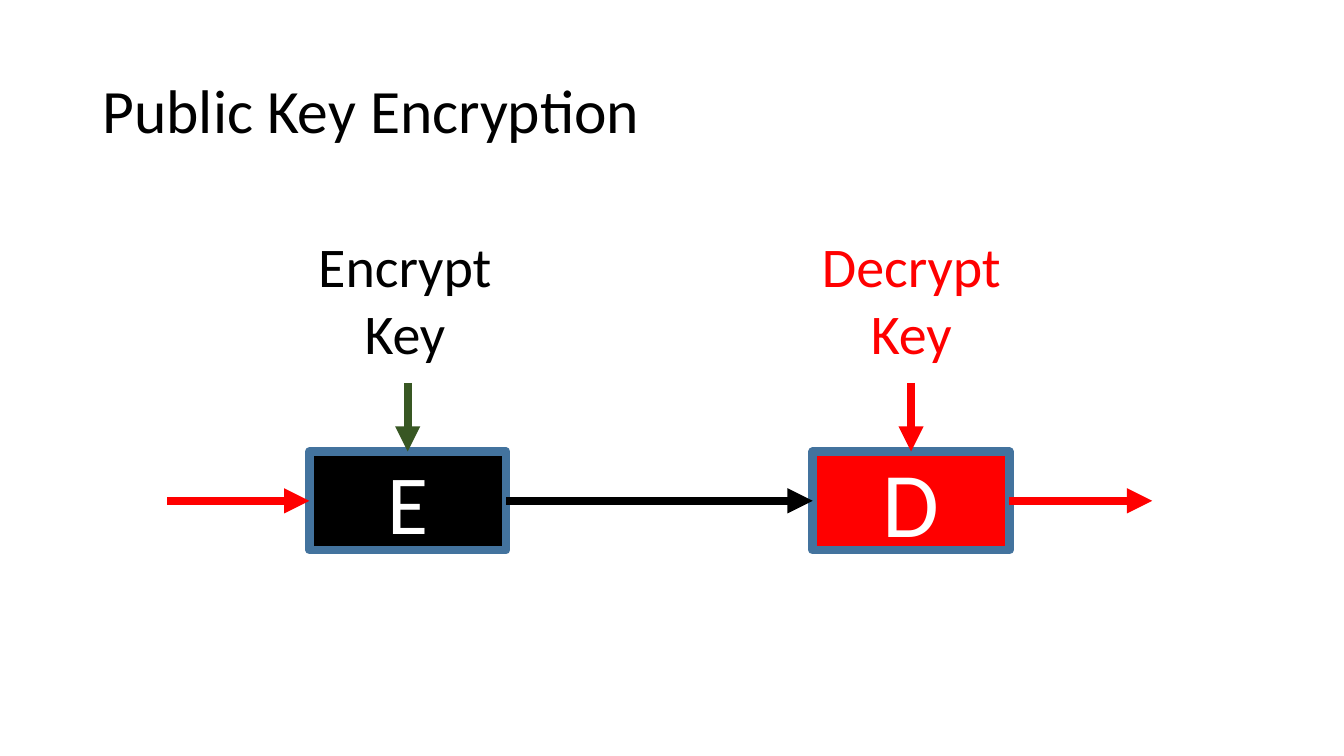
"""Build a slide that shows the flow of public key encryption."""
from typing import Any, NamedTuple, Optional

from lxml import etree
from pptx import Presentation
from pptx import util as u
from pptx.dml.color import RGBColor
from pptx.enum import shapes, text
from pptx.oxml import ns

BLACK, RED, WHITE = "000000", "FF0000", "FFFFFF"
GREEN, BLUE = "385723", "43739E"
TOP, WIDE, HIGH = 322.5, 140.5, 70.5
MID = TOP + HIGH / 2
KEY = 273.5
WEIGHT = 6


class Box(NamedTuple):
    word: str
    left: float
    fill: str
    size: float


class Label(NamedTuple):
    word: str
    left: float
    wide: float
    tint: str


class Arrow(NamedTuple):
    start: tuple[float, float]
    end: tuple[float, float]
    tint: str
    tail: Optional[tuple[str, int]] = None
    head: Optional[tuple[str, int]] = None


BOXES = [Box("E", 221, BLACK, 60), Box("D", 580.5, RED, 66)]
LABELS = [
    Label("Decrypt Key", 566, 170, RED),
    Label("Encrypt Key", 189.5, 199.5, BLACK),
]
E_LEFT, D_LEFT = (box.left for box in BOXES)
E_MID, D_MID = E_LEFT + WIDE / 2, D_LEFT + WIDE / 2
ARROWS = [
    Arrow((E_LEFT + WIDE, MID), (D_LEFT, MID), BLACK, ("E", 3), ("D", 1)),
    Arrow((D_LEFT + WIDE, MID), (823, MID), RED, tail=("D", 3)),
    Arrow((119.5, MID), (E_LEFT, MID), RED, head=("E", 1)),
    Arrow((E_MID, KEY), (E_MID, TOP), GREEN, head=("E", 0)),
    Arrow((D_MID, KEY), (D_MID, TOP), RED, head=("D", 0)),
]


def color(code: str) -> RGBColor:
    return RGBColor.from_string(code)


def apply(item: Any, form: dict[str, Any]) -> None:
    for name, value in form.items():
        setattr(item, name, value)


def write(frame: Any, word: str, size: float, tint: str, align: Any) -> None:
    frame.word_wrap = True
    para = frame.paragraphs[0]
    para.alignment = align
    run = para.add_run()
    run.text = word
    apply(run.font, {"name": "Calibri", "size": u.Pt(size)})
    run.font.color.rgb = color(tint)


def stroke(line: Any, tint: str) -> None:
    line.color.rgb = color(tint)
    line.width = u.Pt(WEIGHT)


def draw_title(title: Any) -> None:
    apply(title, {"left": u.Pt(66), "top": u.Pt(29),
                  "width": u.Pt(828), "height": u.Pt(104)})
    frame = title.text_frame
    apply(frame, {"vertical_anchor": text.MSO_ANCHOR.MIDDLE,
                  "auto_size": text.MSO_AUTO_SIZE.NONE})
    write(frame, "Public Key Encryption", 44, BLACK, text.PP_ALIGN.LEFT)
    frame.paragraphs[0].line_spacing = 0.9


def draw_box(tree: Any, box: Box) -> Any:
    shape = tree.add_shape(shapes.MSO_SHAPE.RECTANGLE, u.Pt(box.left),
                           u.Pt(TOP), u.Pt(WIDE), u.Pt(HIGH))
    shape.shadow.inherit = False
    shape.fill.solid()
    shape.fill.fore_color.rgb = color(box.fill)
    stroke(shape.line, BLUE)
    shape.text_frame.vertical_anchor = text.MSO_ANCHOR.MIDDLE
    write(shape.text_frame, box.word, box.size, WHITE, text.PP_ALIGN.CENTER)
    return shape


def draw_arrow(tree: Any, arrow: Arrow, nodes: dict[str, Any]) -> None:
    ends = [u.Pt(n) for n in (*arrow.start, *arrow.end)]
    link = tree.add_connector(shapes.MSO_CONNECTOR.STRAIGHT, *ends)
    if arrow.tail:
        link.begin_connect(nodes[arrow.tail[0]], arrow.tail[1])
    if arrow.head:
        link.end_connect(nodes[arrow.head[0]], arrow.head[1])
    stroke(link.line, arrow.tint)
    tip = etree.SubElement(link.line._get_or_add_ln(), ns.qn("a:tailEnd"))
    tip.set("type", "triangle")
    etree.SubElement(link._element.spPr, ns.qn("a:effectLst"))


def draw_label(tree: Any, label: Label) -> None:
    shape = tree.add_textbox(u.Pt(label.left), u.Pt(161.5),
                             u.Pt(label.wide), u.Pt(104))
    shape.text_frame.auto_size = text.MSO_AUTO_SIZE.SHAPE_TO_FIT_TEXT
    write(shape.text_frame, label.word, 40, label.tint, text.PP_ALIGN.CENTER)


def main() -> None:
    deck = Presentation()
    apply(deck, {"slide_width": u.Pt(960), "slide_height": u.Pt(540)})
    slide = deck.slides.add_slide(deck.slide_layouts[5])
    tree = slide.shapes
    draw_title(tree.title)
    nodes = {box.word: draw_box(tree, box) for box in BOXES}
    for arrow in ARROWS:
        draw_arrow(tree, arrow, nodes)
    for label in LABELS:
        draw_label(tree, label)
    deck.save("out.pptx")


if __name__ == "__main__":
    main()
